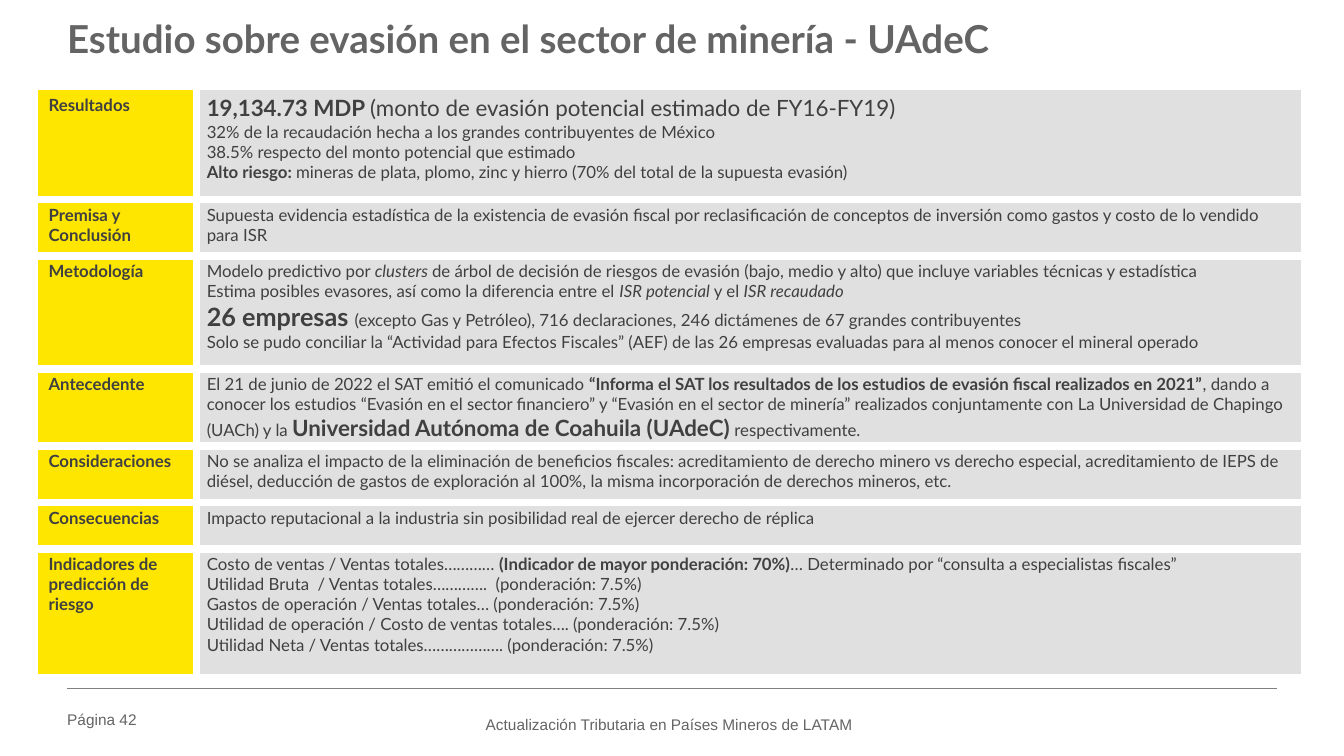
from dataclasses import dataclass

from lxml import etree
from pptx import Presentation
from pptx import util as u
from pptx.dml import color
from pptx.enum import shapes
from pptx.oxml import ns


@dataclass(frozen=True)
class Theme:
    yellow: str = "FFE600"
    pale: str = "E0E0E0"
    white: str = "FFFFFF"
    dark: str = "404040"
    gray: str = "646464"
    rule: str = "808080"
    face: str = "Lato"
    plain: str = "Arial"
    title: float = 27.5
    huge: float = 18
    large: float = 16
    body: float = 12
    foot: float = 11
    gap: float = 6


theme = Theme()
bold = {"bold": True}
slant = {"italic": True}
large = {"size": theme.large}


def write(frame, paras, face=theme.face, size=theme.body, ink=theme.dark,
          bold=False, italic=False, lead=None):
    """Fill a text frame; each run is a string or a (string, format) pair."""
    for n, runs in enumerate(paras):
        para = frame.paragraphs[0] if n == 0 else frame.add_paragraph()
        if lead:
            para.line_spacing = lead
        for item in runs:
            words, own = (item, {}) if isinstance(item, str) else item
            form = {"size": size, "bold": bold, "italic": italic, **own}
            run = para.add_run()
            run.text = words
            run.font.name = face
            run.font.size = u.Pt(form["size"])
            run.font.bold = form["bold"]
            run.font.italic = form["italic"]
            run.font.color.rgb = color.RGBColor.from_string(ink)


def edge(cell, sides):
    """Draw white borders on the given sides and none on the others."""
    props = cell._tc.get_or_add_tcPr()
    for side in "LRTB":
        line = etree.SubElement(props, ns.qn("a:ln" + side))
        if side in sides:
            line.set("w", str(u.Pt(theme.gap)))
            fill = etree.SubElement(line, ns.qn("a:solidFill"))
            etree.SubElement(fill, ns.qn("a:srgbClr"), val=theme.white)
        else:
            etree.SubElement(line, ns.qn("a:noFill"))


deck = Presentation()
deck.slide_width, deck.slide_height = u.Pt(960), u.Pt(540)
slide = deck.slides.add_slide(deck.slide_layouts[6])

# Title and footer
labels = [
    ("Estudio sobre evasión en el sector de minería - UAdeC",
     (48, 16, 864, 67.5), True,
     {"size": theme.title, "bold": True, "lead": 0.85}),
    ("Página 42", (48, 507.6, 70, 16), True,
     {"face": theme.plain, "size": theme.foot}),
    ("Actualización Tributaria en Países Mineros de LATAM",
     (347, 510.5, 266.4, 13), False,
     {"face": theme.plain, "size": theme.foot}),
]
for words, place, wrap, form in labels:
    frame = slide.shapes.add_textbox(*map(u.Pt, place)).text_frame
    frame.word_wrap = wrap
    frame.margin_left = frame.margin_right = 0
    frame.margin_top = frame.margin_bottom = 0
    write(frame, [[words]], ink=theme.gray, **form)

rule = slide.shapes.add_connector(
    shapes.MSO_CONNECTOR.STRAIGHT, u.Pt(48), u.Pt(491.8), u.Pt(912), u.Pt(491.8))
rule.line.color.rgb = color.RGBColor.from_string(theme.rule)
rule.line.width = u.Pt(0.25)
etree.SubElement(rule._element.spPr, ns.qn("a:effectLst"))

# Study table: row height, heading, paragraphs
rows = [
    (78.5, "Resultados", [
        [("19,134.73 MDP ", {**bold, **large}),
         ("(monto de evasión potencial estimado de FY16-FY19)", large)],
        ["32% de la recaudación hecha a los grandes contribuyentes de México"],
        ["38.5% respecto del monto potencial que estimado"],
        [("Alto riesgo: ", bold),
         "mineras de plata, plomo, zinc y hierro (70% del total de la supuesta evasión)"],
    ]),
    (40.3, "Premisa y Conclusión", [
        ["Supuesta evidencia estadística de la existencia de evasión fiscal por "
         "reclasificación de conceptos de inversión como gastos y costo de lo "
         "vendido para ISR"],
    ]),
    (80.7, "Metodología", [
        ["Modelo predictivo por ", ("clusters ", slant),
         "de árbol de decisión de riesgos de evasión (bajo, medio y alto) que "
         "incluye variables técnicas y estadística"],
        ["Estima posibles evasores, así como la diferencia entre el ",
         ("ISR potencial", slant), " y el ", ("ISR recaudado", slant)],
        [("26 empresas ", {**bold, "size": theme.huge}),
         "(excepto Gas y Petróleo), 716 declaraciones, 246 dictámenes de 67 "
         "grandes contribuyentes"],
        ["Solo se pudo conciliar la “Actividad para Efectos Fiscales” (AEF) de las "
         "26 empresas evaluadas para al menos conocer el mineral operado"],
    ]),
    (54.8, "Antecedente", [
        ["El 21 de junio de 2022 el SAT emitió el comunicado ",
         ("“Informa el SAT los resultados de los estudios de evasión fiscal "
          "realizados en 2021”", bold),
         ", dando a conocer los estudios “Evasión en el sector financiero” y "
         "“Evasión en el sector de minería” realizados conjuntamente con La "
         "Universidad de Chapingo (UACh) y la ",
         ("Universidad Autónoma de Coahuila (UAdeC)", {**bold, **large}),
         " respectivamente."],
    ]),
    (40.3, "Consideraciones", [
        ["No se analiza el impacto de la eliminación de beneficios fiscales: "
         "acreditamiento de derecho minero vs derecho especial, acreditamiento de "
         "IEPS de diésel, deducción de gastos de exploración al 100%, la misma "
         "incorporación de derechos mineros, etc."],
    ]),
    (33.1, "Consecuencias", [
        ["Impacto reputacional a la industria sin posibilidad real de ejercer "
         "derecho de réplica"],
    ]),
    (89.3, "Indicadores de predicción de riesgo", [
        ["Costo de ventas / Ventas totales………… ",
         ("(Indicador de mayor ponderación: 70%)", bold),
         "… Determinado por “consulta a especialistas fiscales”"],
        ["Utilidad Bruta  / Ventas totales………….  (ponderación: 7.5%)"],
        ["Gastos de operación / Ventas totales… (ponderación: 7.5%)"],
        ["Utilidad de operación / Costo de ventas totales…. (ponderación: 7.5%)"],
        ["Utilidad Neta / Ventas totales………………. (ponderación: 7.5%)"],
    ]),
]
widths = [113, 789]
high = sum(row[0] for row in rows)
grid = slide.shapes.add_table(
    len(rows), 2, u.Pt(27.5), u.Pt(64), u.Pt(sum(widths)), u.Pt(high)).table
grid.first_row = grid.horz_banding = False
for col, width in zip(grid.columns, widths):
    col.width = u.Pt(width)

last = len(rows) - 1
for r, (height, head, paras) in enumerate(rows):
    grid.rows[r].height = u.Pt(height)
    sides = ("T" if r > 0 else "") + ("B" if r < last else "")
    parts = [("R", theme.yellow, [[head]], True), ("L", theme.pale, paras, False)]
    for c, (side, tint, words, strong) in enumerate(parts):
        cell = grid.cell(r, c)
        edge(cell, side + sides)
        cell.fill.solid()
        cell.fill.fore_color.rgb = color.RGBColor.from_string(tint)
        write(cell.text_frame, words, bold=strong)

deck.save("out.pptx")
